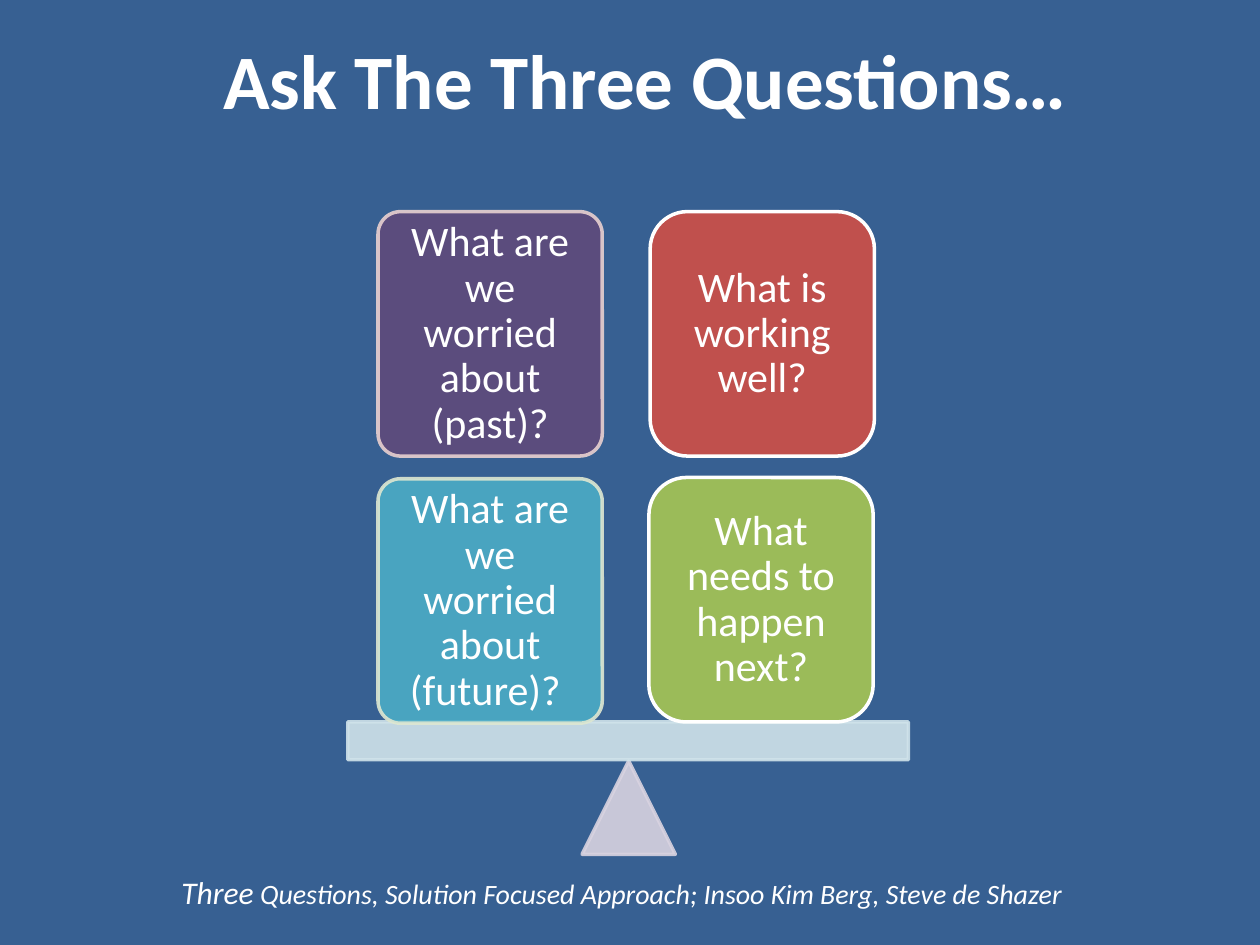
from lxml import etree
from pptx import Presentation
from pptx.dml.color import RGBColor
from pptx.enum import shapes, text
from pptx.oxml.ns import qn
from pptx.util import Inches, Pt

COLORS = {
    "background": "376092", "white": "FFFFFF",
    "purple": "604A7B", "pink": "E8D0D0",
    "teal": "4BACC6", "pale green": "DEE7D1",
    "red": "C0504D", "green": "9BBB59",
    "lavender": "D8D3E0", "pale blue": "D0E3EA",
}
FONT = "Calibri"
CARD_WIDTH, CARD_HEIGHT = 1.78, 1.94

# question, left, top, corner, fill, line, opacity in percent
CARDS = [
    ("What are we worried about (past)?", 3, 1.68, 0.1, "purple", "pink", 90),
    ("What are we worried about (future)? ", 3, 3.8, 0.1, "teal", "pale green", 90),
    ("What is working well?", 5.16, 1.68, 0.1667, "red", "white", 100),
    ("What needs to happen next?", 5.15, 3.79, 0.1667, "green", "white", 100),
]


def rgb(name):
    return RGBColor.from_string(COLORS[name])


def style_font(font, size, bold=None, italic=None):
    font.name = FONT
    font.size = Pt(size)
    font.bold = bold
    font.italic = italic
    font.color.rgb = rgb("white")


def add_block(page, kind, left, top, width, height, fill, line, opacity=100):
    block = page.shapes.add_shape(
        kind, Inches(left), Inches(top), Inches(width), Inches(height))
    block.shadow.inherit = False
    block.fill.solid()
    block.fill.fore_color.rgb = rgb(fill)
    block.line.color.rgb = rgb(line)
    block.line.width = Pt(2)
    if opacity < 100:
        for color in block.element.spPr.iter(qn("a:srgbClr")):
            etree.SubElement(color, qn("a:alpha"), val=str(opacity * 1000))
    return block


def add_card(page, question, left, top, corner, fill, line, opacity):
    card = add_block(page, shapes.MSO_SHAPE.ROUNDED_RECTANGLE, left, top,
                     CARD_WIDTH, CARD_HEIGHT, fill, line, opacity)
    card.adjustments[0] = corner
    frame = card.text_frame
    frame.word_wrap = True
    frame.vertical_anchor = text.MSO_ANCHOR.MIDDLE
    frame.margin_left = frame.margin_right = Inches(0.1)
    frame.margin_top = frame.margin_bottom = Inches(0.1)
    para = frame.paragraphs[0]
    para.text = question
    para.alignment = text.PP_ALIGN.CENTER
    para.line_spacing = 0.9
    style_font(para.font, 24)


def set_title(page, words):
    title = page.shapes.title
    title.left, title.top = Inches(0), Inches(0)
    title.width, title.height = Inches(10.25), Inches(1.25)
    title.text_frame.vertical_anchor = text.MSO_ANCHOR.MIDDLE
    para = title.text_frame.paragraphs[0]
    para.text = words
    para.alignment = text.PP_ALIGN.CENTER
    style_font(para.font, 44, bold=True)


def add_credit(page, runs):
    box = page.shapes.add_textbox(
        Inches(0.81), Inches(6.88), Inches(8.25), Inches(0.4))
    box.text_frame.word_wrap = True
    para = box.text_frame.paragraphs[0]
    para.alignment = text.PP_ALIGN.CENTER
    for words, size in runs:
        span = para.add_run()
        span.text = words
        style_font(span.font, size, italic=True)


def main():
    deck = Presentation()
    deck.slide_width, deck.slide_height = Inches(10), Inches(7.5)
    page = deck.slides.add_slide(deck.slide_layouts[5])
    page.background.fill.solid()
    page.background.fill.fore_color.rgb = rgb("background")

    # Title and source line
    set_title(page, "Ask The Three Questions…")
    add_credit(page, [
        ("Three", 18),
        (" Questions, Solution Focused Approach; Insoo Kim Berg, Steve de Shazer", 16),
    ])

    # Balance: pivot and beam
    add_block(page, shapes.MSO_SHAPE.ISOSCELES_TRIANGLE, 4.62, 6.04, 0.74, 0.74,
              "lavender", "lavender", 90)
    add_block(page, shapes.MSO_SHAPE.RECTANGLE, 2.76, 5.73, 4.45, 0.3,
              "pale blue", "pale blue", 90)

    # Questions resting on the beam
    for card in CARDS:
        add_card(page, *card)

    deck.save("out.pptx")


if __name__ == "__main__":
    main()
